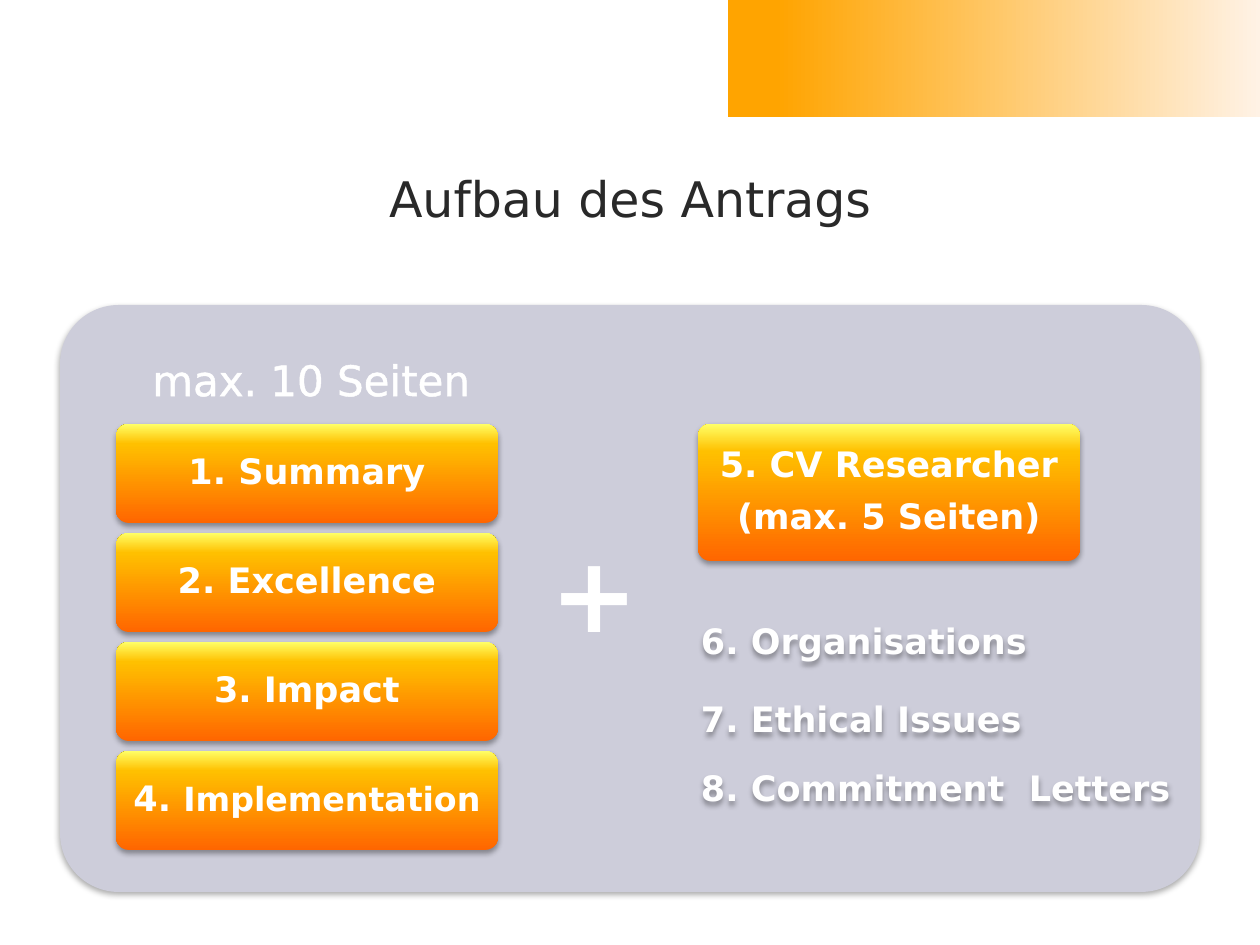
import pptx
import pptx.dml.color
import pptx.enum.shapes
import pptx.enum.text
import pptx.oxml
import pptx.oxml.ns
import pptx.util

COLORS = {
    "title": "292929", "white": "FFFFFF", "panel": "CDCDDA", "shadow": "000000",
    "band_start": "FFA400", "band_end": "FFF2E5",
    "button_low": "FF6600", "button_mid": "FFC000", "button_high": "FFFF66",
}
FONT = "DejaVu Sans"
SHAPES = pptx.enum.shapes.MSO_SHAPE
ALIGN = pptx.enum.text.PP_ALIGN
ANCHOR = pptx.enum.text.MSO_ANCHOR
BUTTON_STOPS = [(0, "button_low"), (80, "button_mid"), (100, "button_high")]
SOFT_SHADOW = {"alpha": 35, "blur": 3.1, "dist": 1.8}


def px(length):
    """Convert whole pixels to EMU."""
    return pptx.util.Emu(round(length * 914400 / 126))


def rgb(name):
    """Return the named colour."""
    return pptx.dml.color.RGBColor.from_string(COLORS[name])


def xml(markup):
    """Build a DrawingML element, declaring its namespace on the root tag."""
    tag, rest = markup.split(" ", 1)
    return pptx.oxml.parse_xml(f"{tag} {pptx.oxml.ns.nsdecls('a')} {rest}")


def fill_gradient(shape, stops, angle):
    """Fill a shape with a linear gradient of (percent, colour) stops."""
    shape.fill.gradient()
    shape.fill.gradient_angle = angle
    stop_list = shape.fill._fill._gradFill.find(pptx.oxml.ns.qn("a:gsLst"))
    for old_stop in list(stop_list):
        stop_list.remove(old_stop)
    for percent, color in stops:
        stop_list.append(xml(
            f'<a:gs pos="{percent * 1000}"><a:srgbClr val="{COLORS[color]}"/></a:gs>'))


def cast_shadow(shape, alpha, blur, dist):
    """Give a shape a soft shadow falling straight down."""
    shape.shadow.inherit = False
    effects = shape._element.spPr.find(pptx.oxml.ns.qn("a:effectLst"))
    effects.append(xml(
        f'<a:outerShdw blurRad="{pptx.util.Pt(blur)}" dist="{pptx.util.Pt(dist)}" '
        f'dir="5400000" rotWithShape="0"><a:srgbClr val="{COLORS["shadow"]}">'
        f'<a:alpha val="{alpha * 1000}"/></a:srgbClr></a:outerShdw>'))


def add_block(slide, kind, box, radius=0):
    """Add a borderless shape without shadow, with a corner radius in px."""
    block = slide.shapes.add_shape(kind, *map(px, box))
    block.shadow.inherit = False
    block.line.fill.background()
    if radius:
        block.adjustments[0] = round(radius / min(box[2:]), 2)
    return block


def write(shape, lines, color="white", bold=True, align=ALIGN.LEFT,
          anchor=ANCHOR.MIDDLE, margins=(10, 13, 10, 13), spacing=None, after=None):
    """Write lines, each a list of (text, size) runs, and return the frame."""
    frame = shape.text_frame
    frame.word_wrap = True
    frame.vertical_anchor = anchor
    (frame.margin_left, frame.margin_top,
     frame.margin_right, frame.margin_bottom) = map(px, margins)
    for index, runs in enumerate(lines):
        paragraph = frame.add_paragraph() if index else frame.paragraphs[0]
        paragraph.alignment = align
        paragraph.line_spacing = spacing
        paragraph.space_after = after
        for text, size in runs:
            run = paragraph.add_run()
            run.text = text
            run.font.name = FONT
            run.font.size = pptx.util.Pt(size)
            run.font.bold = bold
            run.font.color.rgb = rgb(color)
    return frame


def add_text(slide, box, text, size, **style):
    """Add a one-line text box."""
    label = slide.shapes.add_textbox(*map(px, box))
    write(label, [[(text, size)]], **style)
    return label


def add_panel(slide):
    """Add the grey panel with its outlined heading."""
    panel = add_block(slide, SHAPES.ROUNDED_RECTANGLE, (60, 305, 1140, 587), 60)
    panel.fill.solid()
    panel.fill.fore_color.rgb = rgb("panel")
    cast_shadow(panel, 32, 3.5, 2.2)
    frame = write(panel, [[("max. 10 Seiten", 24)]], bold=False,
                  margins=(75, 13, 13, 445), spacing=0.9)
    heading = frame.paragraphs[0].runs[0]
    heading._r.get_or_add_rPr().insert(0, xml(
        f'<a:ln w="{pptx.util.Pt(1.45)}"><a:solidFill>'
        f'<a:srgbClr val="{COLORS["white"]}"/></a:solidFill></a:ln>'))


def add_button(slide, box, lines):
    """Add a glossy orange section button."""
    button = add_block(slide, SHAPES.ROUNDED_RECTANGLE, box, 13)
    fill_gradient(button, BUTTON_STOPS, 90)
    cast_shadow(button, **SOFT_SHADOW)
    write(button, lines, align=ALIGN.CENTER, spacing=0.9, after=pptx.util.Pt(8))


def main():
    """Build the slide and save it."""
    deck = pptx.Presentation()
    deck.slide_width, deck.slide_height = px(1260), px(945)
    slide = deck.slides.add_slide(deck.slide_layouts[6])

    band = add_block(slide, SHAPES.RECTANGLE, (728, 0, 532, 117))
    fill_gradient(band, [(9, "band_start"), (100, "band_end")], 0)
    add_text(slide, (63, 136, 1134, 124), "Aufbau des Antrags", 28,
             color="title", bold=False, align=ALIGN.CENTER)
    add_panel(slide)

    sections = [
        [("1. Summary", 20)],
        [("2. Excellence", 20)],
        [("3. Impact", 20)],
        [("4. ", 20), ("Implementation", 19)],
    ]
    for row, section in enumerate(sections):
        add_button(slide, (116, 424 + 109 * row, 382, 99), [section])
    add_button(slide, (698, 424, 382, 137),
               [[("5. CV Researcher", 20)], [("(max. 5 Seiten)", 20)]])

    add_text(slide, (538, 522, 98, 140), "+", 60,
             anchor=ANCHOR.TOP, margins=(13, 6, 13, 6))
    attachments = [(591, "6. Organisations"), (669, "7. Ethical Issues"),
                   (738, "8. Commitment  Letters")]
    for top, name in attachments:
        attachment = add_text(slide, (687, top, 511, 99), name, 20,
                              margins=(14, 13, 14, 13))
        cast_shadow(attachment, **SOFT_SHADOW)

    deck.save("out.pptx")


if __name__ == "__main__":
    main()
